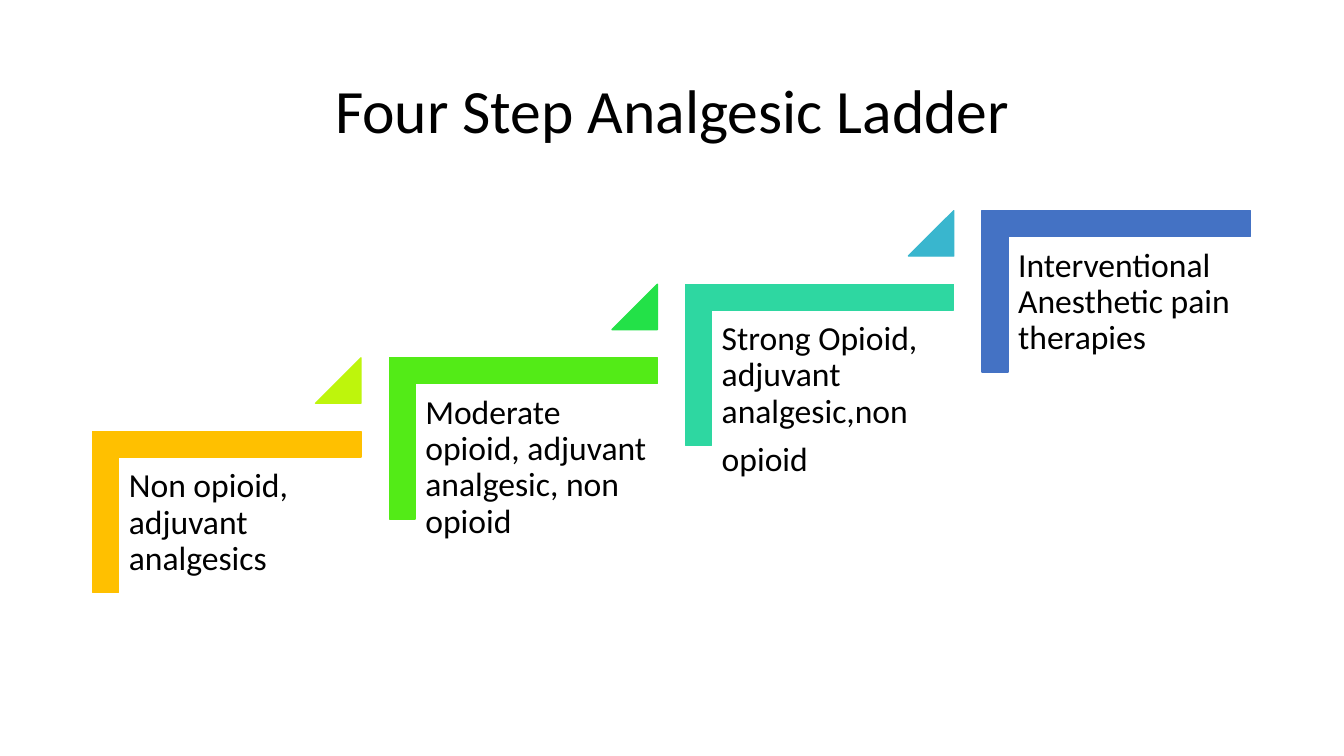
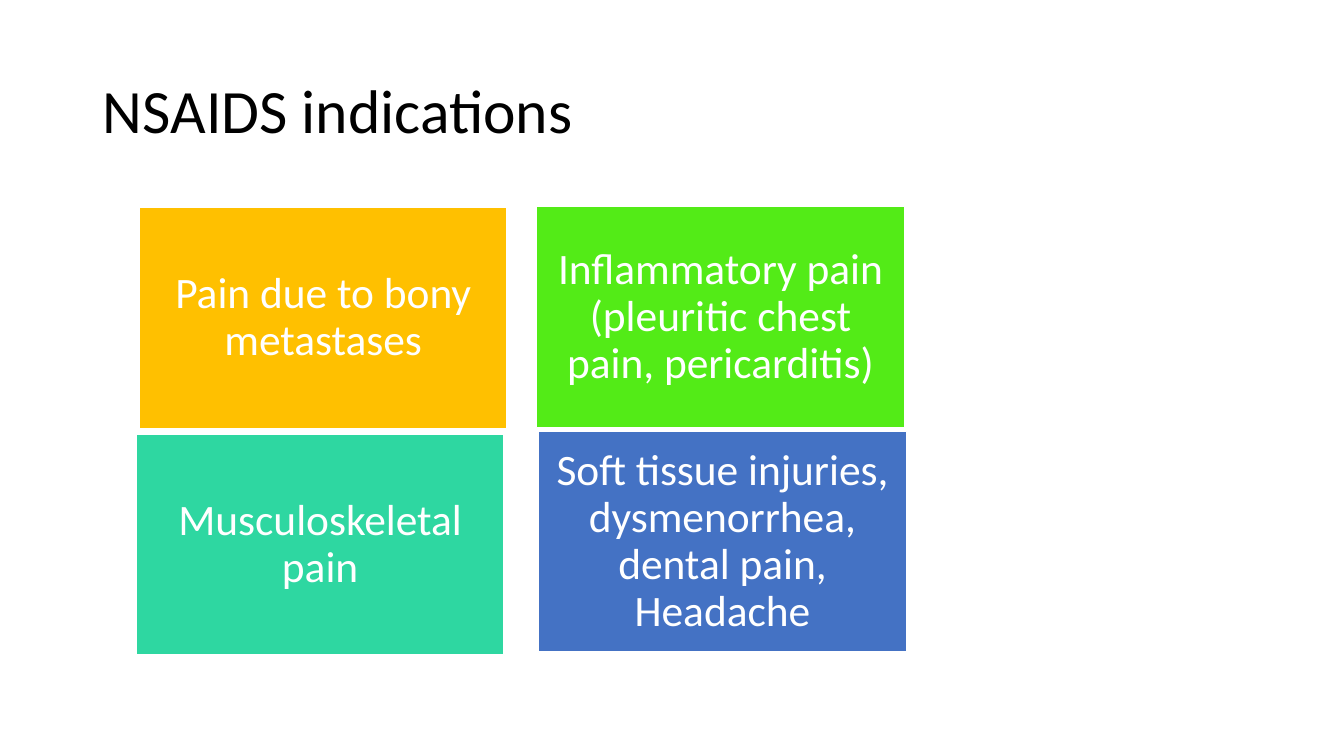
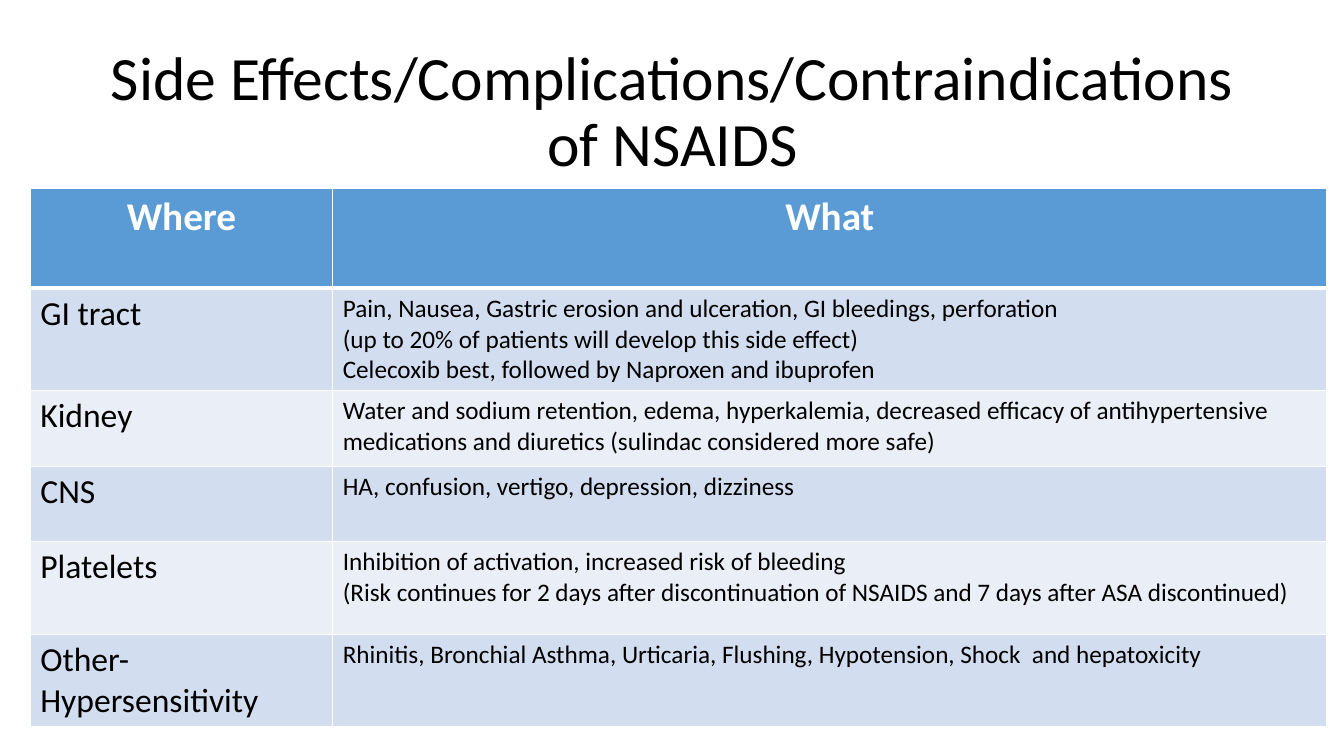
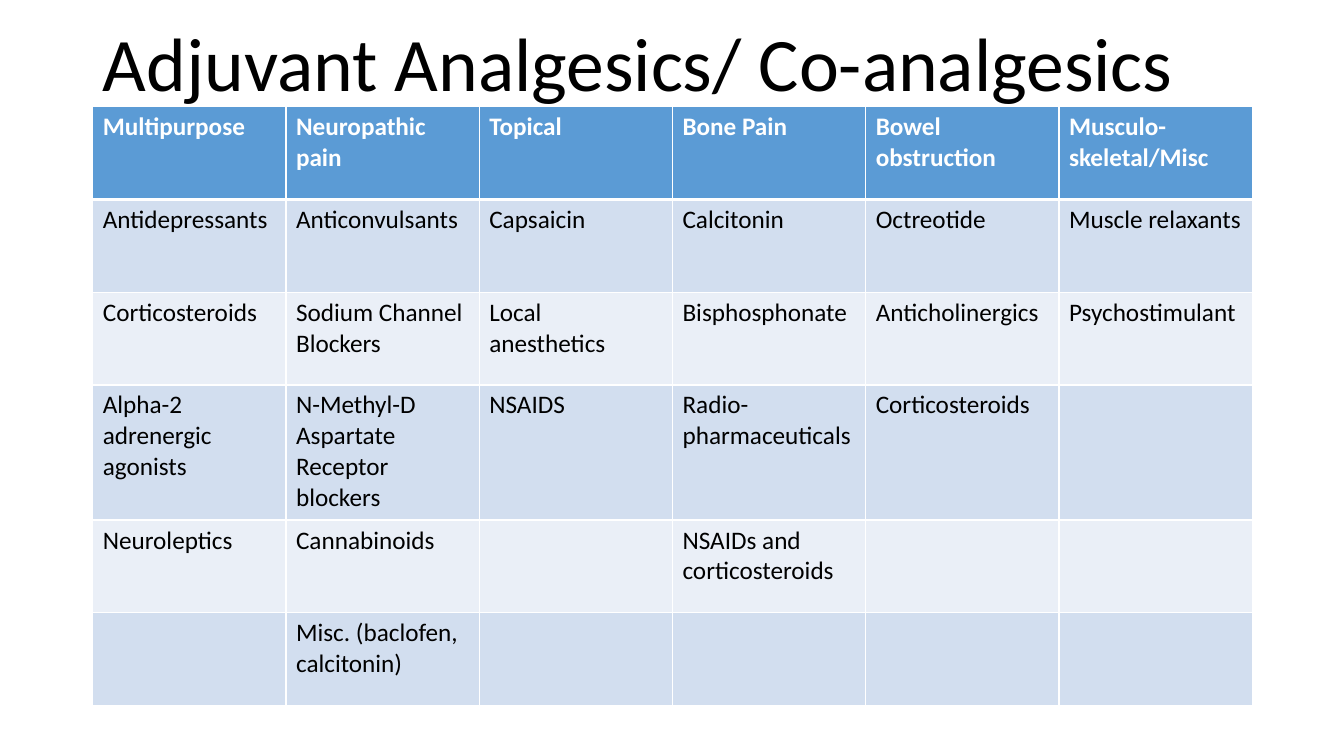
from lxml.etree import SubElement
from pptx import Presentation
from pptx.dml.color import RGBColor
from pptx.enum.shapes import MSO_SHAPE
from pptx.enum.text import MSO_ANCHOR, MSO_AUTO_SIZE, PP_ALIGN
from pptx.oxml.ns import qn
from pptx.util import Inches, Pt

# Shared colours
BLACK, WHITE = "000000", "FFFFFF"
AMBER, GREEN, TEAL, BLUE = "FFC000", "53EB17", "2ED7A1", "4472C4"
HEADER_FILL = "5B9BD5"
BAND_FILLS = ("D2DEEF", "EAEFF7")


def colour(hex_code):
    return RGBColor.from_string(hex_code)


class Deck:
    font = "Calibri"

    def __init__(self):
        self.prs = Presentation()
        self.prs.slide_width, self.prs.slide_height = Inches(13.33), Inches(7.5)
        self.slide = None

    def set_text(self, frame, text, size, ink=BLACK, align=PP_ALIGN.LEFT,
                 bold=False, spacing=None, after=None):
        """Put text in a frame; each line is a paragraph."""
        frame.text = text
        for paragraph in frame.paragraphs:
            paragraph.alignment = align
            paragraph.line_spacing = spacing
            paragraph.space_after = after
            for run in paragraph.runs:
                run.font.name, run.font.size = self.font, Pt(size)
                run.font.bold = bold
                run.font.color.rgb = colour(ink)

    def add_slide(self, title, align=PP_ALIGN.LEFT, size=44, top=0.4, height=1.45):
        self.slide = self.prs.slides.add_slide(self.prs.slide_layouts[5])
        heading = self.slide.shapes.title
        heading.left, heading.top = Inches(0.92), Inches(top)
        heading.width, heading.height = Inches(11.5), Inches(height)
        frame = heading.text_frame
        frame.word_wrap = True
        frame.auto_size = MSO_AUTO_SIZE.NONE
        frame.vertical_anchor = MSO_ANCHOR.MIDDLE
        self.set_text(frame, title, size, align=align, spacing=0.9)

    def shape(self, kind, left, top, width, height, fill, line=None,
              rotation=0, adjustments=()):
        shape = self.slide.shapes.add_shape(
            kind, Inches(left), Inches(top), Inches(width), Inches(height))
        shape.shadow.inherit = False
        shape.fill.solid()
        shape.fill.fore_color.rgb = colour(fill)
        shape.line.color.rgb = colour(line or fill)
        shape.line.width = Pt(1)
        shape.rotation = rotation
        for index, value in enumerate(adjustments):
            shape.adjustments[index] = value
        return shape

    def fit_text(self, shape, text, size, inset, **style):
        frame = shape.text_frame
        frame.word_wrap = True
        frame.margin_left = frame.margin_right = Inches(inset)
        frame.margin_top = frame.margin_bottom = Inches(inset)
        self.set_text(frame, text, size, spacing=0.9, after=Pt(0.35 * size), **style)
        return frame

    def label(self, left, top, width, height, text, size):
        box = self.slide.shapes.add_textbox(
            Inches(left), Inches(top), Inches(width), Inches(height))
        self.fit_text(box, text, size, 0.1)

    def tile(self, left, top, width, height, text, fill):
        tile = self.shape(MSO_SHAPE.RECTANGLE, left, top, width, height, fill, WHITE)
        frame = self.fit_text(tile, text, 31, 0.13, ink=WHITE, align=PP_ALIGN.CENTER)
        frame.vertical_anchor = MSO_ANCHOR.MIDDLE

    def borders(self, cell, top, bottom):
        properties = cell._tc.get_or_add_tcPr()
        for side, points in (("L", 1), ("R", 1), ("T", top), ("B", bottom)):
            edge = SubElement(properties, qn(f"a:ln{side}"), w=str(Pt(points)))
            solid = SubElement(edge, qn("a:solidFill"))
            SubElement(solid, qn("a:srgbClr"), val=WHITE)

    def table(self, left, top, widths, heights, rows, sizes,
              header_size, header_align=PP_ALIGN.LEFT):
        grid = self.slide.shapes.add_table(
            len(rows), len(widths), Inches(left), Inches(top),
            Inches(sum(widths)), Inches(sum(heights))).table
        for column, width in zip(grid.columns, widths):
            column.width = Inches(width)
        for r, (texts, height) in enumerate(zip(rows, heights)):
            grid.rows[r].height = Inches(height)
            for c, text in enumerate(texts):
                cell = grid.cell(r, c)
                # A thick rule parts the header from the body
                self.borders(cell, 3 if r == 1 else 1, 3 if r == 0 else 1)
                cell.fill.solid()
                if r == 0:
                    fill = HEADER_FILL
                    self.set_text(cell.text_frame, text, header_size, WHITE,
                                  header_align, bold=True)
                else:
                    fill = BAND_FILLS[(r - 1) % 2]
                    self.set_text(cell.text_frame, text, sizes[c])
                cell.fill.fore_color.rgb = colour(fill)


def ladder(deck):
    deck.add_slide("Four Step Analgesic Ladder", PP_ALIGN.CENTER)
    steps = [
        ("Non opioid, adjuvant analgesics", AMBER, "BEF50C"),
        ("Moderate opioid, adjuvant analgesic, non opioid", GREEN, "23E148"),
        ("Strong Opioid, adjuvant analgesic,non\nopioid", TEAL, "39B6CE"),
        ("Interventional Anesthetic pain therapies", BLUE, None),
    ]
    for i, (text, step_fill, rise_fill) in enumerate(steps):
        left, top = 1.45 + 2.94 * i, 3.75 - 0.73 * i
        deck.shape(MSO_SHAPE.CORNER, left, top, 1.6, 2.66, step_fill,
                   rotation=90, adjustments=(0.16, 0.16))
        deck.label(left - 0.27, top + 0.8, 2.4, 2.11, text, 24)
        if rise_fill:
            deck.shape(MSO_SHAPE.ISOSCELES_TRIANGLE, left + 1.68, top - 0.2,
                       0.45, 0.45, rise_fill, adjustments=(1,))


def indications(deck):
    deck.add_slide("NSAIDS indications")
    # The tiles are placed slightly off a strict grid
    for left, top, text, fill in [
        (1.38, 2.06, "Pain due to bony metastases", AMBER),
        (5.32, 2.05, "Inflammatory pain (pleuritic chest pain, pericarditis)", GREEN),
        (1.35, 4.31, "Musculoskeletal pain", TEAL),
        (5.34, 4.28, "Soft tissue injuries, dysmenorrhea, dental pain, Headache", BLUE),
    ]:
        deck.tile(left, top, 3.65, 2.19, text, fill)


def side_effects(deck):
    deck.add_slide("Side Effects/Complications/Contraindications of NSAIDS",
                   PP_ALIGN.CENTER)
    effects = [
        ("Where", "What"),
        ("GI tract",
         "Pain, Nausea, Gastric erosion and ulceration, GI bleedings, perforation\n"
         "(up to 20% of patients will develop this side effect)\n"
         "Celecoxib best, followed by Naproxen and ibuprofen"),
        ("Kidney",
         "Water and sodium retention, edema, hyperkalemia, decreased efficacy of "
         "antihypertensive medications and diuretics (sulindac considered more safe)"),
        ("CNS", "HA, confusion, vertigo, depression, dizziness"),
        ("Platelets",
         "Inhibition of activation, increased risk of bleeding\n"
         "(Risk continues for 2 days after discontinuation of NSAIDS "
         "and 7 days after ASA discontinued)"),
        ("Other-Hypersensitivity",
         "Rhinitis, Bronchial Asthma, Urticaria, Flushing, Hypotension, "
         "Shock  and hepatoxicity"),
    ]
    deck.table(0.3, 1.87, (3, 9.86), (0.99, 1, 0.75, 0.75, 0.92, 0.9), effects,
               (24, 18), 28, PP_ALIGN.CENTER)


def adjuvants(deck):
    deck.add_slide("Adjuvant Analgesics/ Co-analgesics", size=54, top=0, height=1.32)
    drugs = [
        ("Multipurpose", "Neuropathic pain", "Topical", "Bone Pain",
         "Bowel obstruction", "Musculo-skeletal/Misc"),
        ("Antidepressants", "Anticonvulsants", "Capsaicin", "Calcitonin",
         "Octreotide", "Muscle relaxants"),
        ("Corticosteroids", "Sodium Channel Blockers", "Local anesthetics",
         "Bisphosphonate", "Anticholinergics", "Psychostimulant"),
        ("Alpha-2 adrenergic agonists", "N-Methyl-D Aspartate Receptor blockers",
         "NSAIDS", "Radio-\npharmaceuticals", "Corticosteroids", ""),
        ("Neuroleptics", "Cannabinoids", "", "NSAIDs and corticosteroids", "", ""),
        ("", "Misc. (baclofen, calcitonin)", "", "", "", ""),
    ]
    deck.table(0.92, 1.06, [11.5 / 6] * 6, (0.92, 0.92, 0.92, 1.34, 0.92, 0.92),
               drugs, [18] * 6, 18)


def main():
    deck = Deck()
    for build in (ladder, indications, side_effects, adjuvants):
        build(deck)
    deck.prs.save("out.pptx")


if __name__ == "__main__":
    main()
